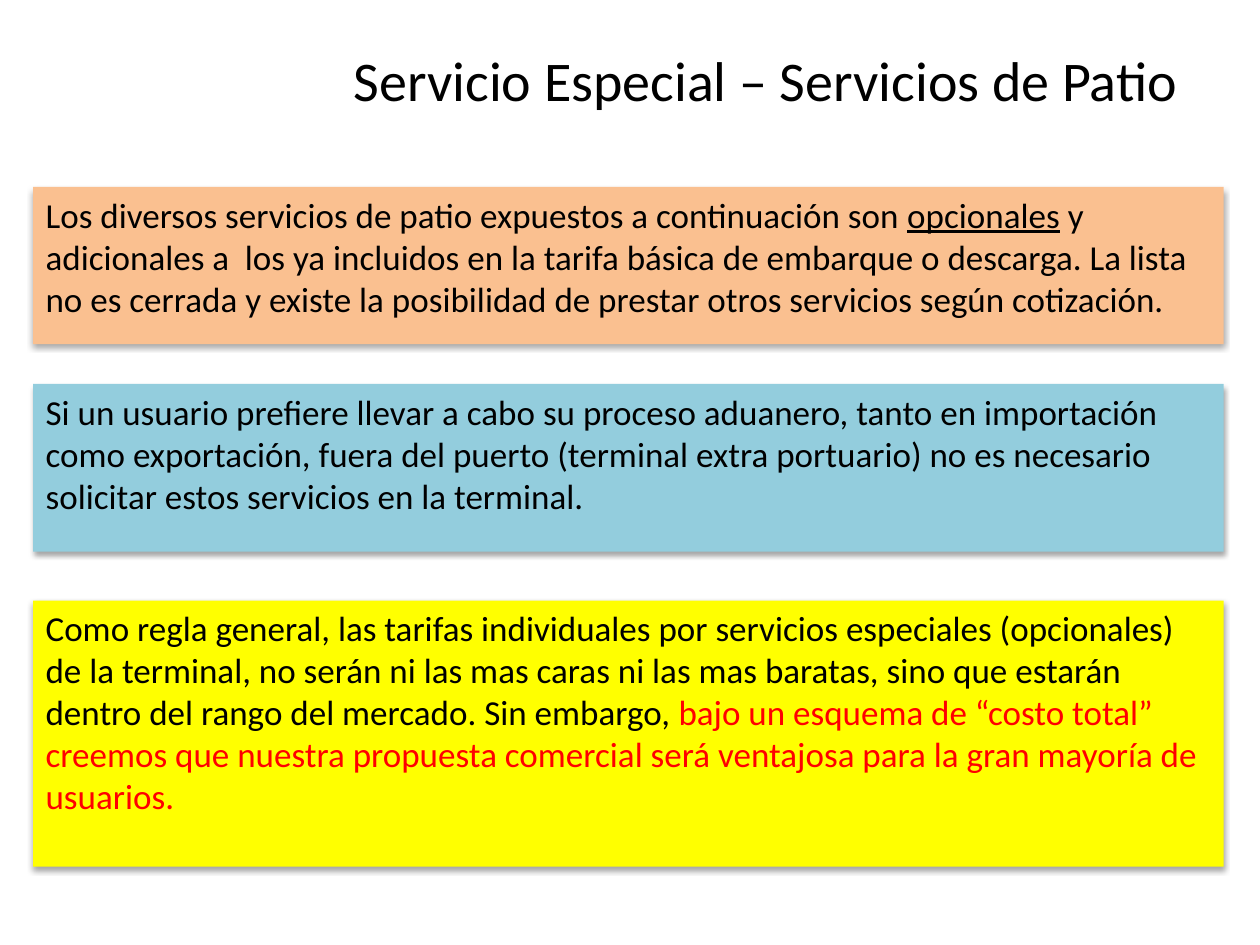
from dataclasses import dataclass

from lxml import etree
from pptx import Presentation
from pptx.dml.color import RGBColor
from pptx.enum import shapes, text
from pptx.oxml import ns
from pptx.util import Cm, Pt


@dataclass(frozen=True)
class Theme:
    font: str = "Calibri"
    title_size: int = 32
    body_size: int = 20
    ink: str = "000000"
    accent: str = "FF0000"
    orange: str = "FAC090"
    blue: str = "93CDDD"
    yellow: str = "FFFF00"


THEME = Theme()
PANEL_LEFT, PANEL_WIDTH = Cm(0.67), Cm(24)

# Each panel: top and height in cm, fill, runs of (text, colour, underline)
PANELS = [
    (3.77, 3.17, THEME.orange, [
        ("Los diversos servicios de patio expuestos a continuación son ", THEME.ink, False),
        ("opcionales", THEME.ink, True),
        (" y adicionales a  los ya incluidos en la tarifa básica de embarque o "
         "descarga. La lista no es cerrada y existe la posibilidad de prestar "
         "otros servicios según cotización.", THEME.ink, False),
    ]),
    (7.74, 3.38, THEME.blue, [
        ("Si un usuario prefiere llevar a cabo su proceso aduanero, tanto en "
         "importación como exportación, fuera del puerto (terminal extra "
         "portuario) no es necesario solicitar estos servicios en la terminal.",
         THEME.ink, False),
    ]),
    (12.11, 5.36, THEME.yellow, [
        ("Como regla general, las tarifas individuales por servicios especiales "
         "(opcionales) de la terminal, no serán ni las mas caras ni las mas "
         "baratas, sino que estarán dentro del rango del mercado. Sin embargo, ",
         THEME.ink, False),
        ("bajo un esquema de “costo total” creemos que nuestra propuesta "
         "comercial será ventajosa para la gran mayoría de usuarios.",
         THEME.accent, False),
    ]),
]


def add_run(p, content, size, color, underline=False):
    r = p.add_run()
    r.text = content
    r.font.name = THEME.font
    r.font.size = Pt(size)
    r.font.color.rgb = RGBColor.from_string(color)
    if underline:
        r.font.underline = True


def add_soft_shadow(sp):
    """Replace the inherited shadow with a light one cast straight down."""
    sp.shadow.inherit = False
    effects = sp._element.spPr.find(ns.qn("a:effectLst"))
    shadow = etree.SubElement(effects, ns.qn("a:outerShdw"), blurRad=str(Pt(3.1)),
                              dist=str(Pt(1.8)), dir="5400000", rotWithShape="0")
    color = etree.SubElement(shadow, ns.qn("a:srgbClr"), val=THEME.ink)
    etree.SubElement(color, ns.qn("a:alpha"), val="35000")


def set_title(s, content):
    sp = s.shapes.title
    sp.left, sp.top, sp.width, sp.height = Cm(6.15), Cm(0.79), Cm(17.86), Cm(1.63)
    tf = sp.text_frame
    tf.word_wrap = True
    tf.auto_size = text.MSO_AUTO_SIZE.SHAPE_TO_FIT_TEXT
    tf.vertical_anchor = text.MSO_ANCHOR.TOP
    p = tf.paragraphs[0]
    p.alignment = text.PP_ALIGN.RIGHT
    add_run(p, content, THEME.title_size, THEME.ink)


def add_panel(s, top, height, fill, runs):
    sp = s.shapes.add_shape(shapes.MSO_SHAPE.RECTANGLE, PANEL_LEFT, Cm(top),
                            PANEL_WIDTH, Cm(height))
    sp.fill.solid()
    sp.fill.fore_color.rgb = RGBColor.from_string(fill)
    sp.line.fill.background()
    add_soft_shadow(sp)
    tf = sp.text_frame
    tf.word_wrap = True
    tf.vertical_anchor = text.MSO_ANCHOR.TOP
    p = tf.paragraphs[0]
    p.alignment = text.PP_ALIGN.LEFT
    for content, color, underline in runs:
        add_run(p, content, THEME.body_size, color, underline)


def main():
    prs = Presentation()
    prs.slide_width, prs.slide_height = Cm(25.4), Cm(19.05)
    s = prs.slides.add_slide(prs.slide_layouts.get_by_name("Title Only"))
    set_title(s, "Servicio Especial – Servicios de Patio")
    for panel in PANELS:
        add_panel(s, *panel)
    prs.save("out.pptx")


if __name__ == "__main__":
    main()
